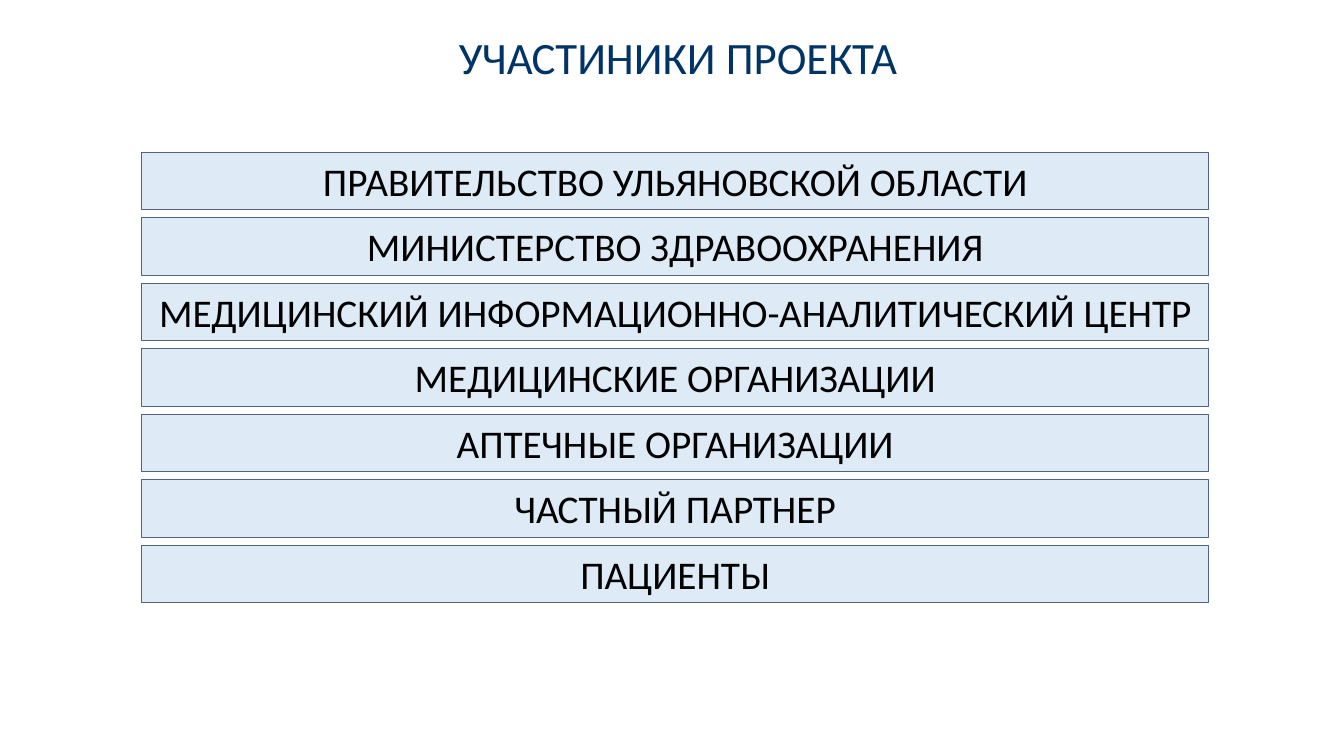
from pptx import Presentation
from pptx.dml.color import RGBColor
from pptx.enum.shapes import MSO_SHAPE
from pptx.enum.text import MSO_ANCHOR, MSO_AUTO_SIZE, PP_ALIGN
from pptx.util import Inches, Pt

# Content
TITLE = "УЧАСТИНИКИ ПРОЕКТА"
PARTICIPANTS = [
    "ПРАВИТЕЛЬСТВО УЛЬЯНОВСКОЙ ОБЛАСТИ",
    "МИНИСТЕРСТВО ЗДРАВООХРАНЕНИЯ",
    "МЕДИЦИНСКИЙ ИНФОРМАЦИОННО-АНАЛИТИЧЕСКИЙ ЦЕНТР",
    "МЕДИЦИНСКИЕ ОРГАНИЗАЦИИ",
    "АПТЕЧНЫЕ ОРГАНИЗАЦИИ",
    "ЧАСТНЫЙ ПАРТНЕР",
    "ПАЦИЕНТЫ",
]
COLORS = {"title": "003366", "bar": "DEEBF7", "border": "50657C", "text": "000000"}
FONT = "Calibri"

# Layout in inches: one column of equal bars
SLIDE_WIDTH, SLIDE_HEIGHT = 13.33, 7.5
TITLE_BOX = (4.5, 0.35, 7.34, 0.53)
BAR_LEFT, BAR_WIDTH, BAR_HEIGHT = 1.4, 10.59, 0.57
FIRST_TOP, ROW_STEP = 1.51, 0.65


def color(name):
    return RGBColor.from_string(COLORS[name])


def write(shape, text, size, color_name, alignment, anchor):
    frame = shape.text_frame
    frame.text = text
    frame.word_wrap = True
    frame.vertical_anchor = anchor
    paragraph = frame.paragraphs[0]
    paragraph.alignment = alignment
    font = paragraph.runs[0].font
    font.name, font.size = FONT, Pt(size)
    font.color.rgb = color(color_name)
    return frame


def add_title(slide):
    title = slide.shapes.title
    title.left, title.top, title.width, title.height = map(Inches, TITLE_BOX)
    frame = write(title, TITLE, 32, "title", PP_ALIGN.LEFT, MSO_ANCHOR.TOP)
    frame.margin_left = frame.margin_right = Inches(0.05)
    frame.margin_top = frame.margin_bottom = Inches(0.05)
    frame.auto_size = MSO_AUTO_SIZE.SHAPE_TO_FIT_TEXT
    frame.paragraphs[0].line_spacing = 0.8
    frame.paragraphs[0].space_before = Pt(0)


def add_bar(slide, row, text):
    top = FIRST_TOP + row * ROW_STEP
    bar = slide.shapes.add_shape(
        MSO_SHAPE.RECTANGLE,
        *map(Inches, (BAR_LEFT, top, BAR_WIDTH, BAR_HEIGHT)))
    bar.shadow.inherit = False
    bar.fill.solid()
    bar.fill.fore_color.rgb = color("bar")
    bar.line.color.rgb = color("border")
    bar.line.width = Pt(0.75)
    frame = write(bar, text, 28, "text", PP_ALIGN.CENTER, MSO_ANCHOR.TOP)
    frame.auto_size = MSO_AUTO_SIZE.SHAPE_TO_FIT_TEXT


def main():
    presentation = Presentation()
    presentation.slide_width = Inches(SLIDE_WIDTH)
    presentation.slide_height = Inches(SLIDE_HEIGHT)
    title_only = presentation.slide_layouts[5]
    slide = presentation.slides.add_slide(title_only)
    add_title(slide)
    for row, participant in enumerate(PARTICIPANTS):
        add_bar(slide, row, participant)
    presentation.save("out.pptx")


if __name__ == "__main__":
    main()
